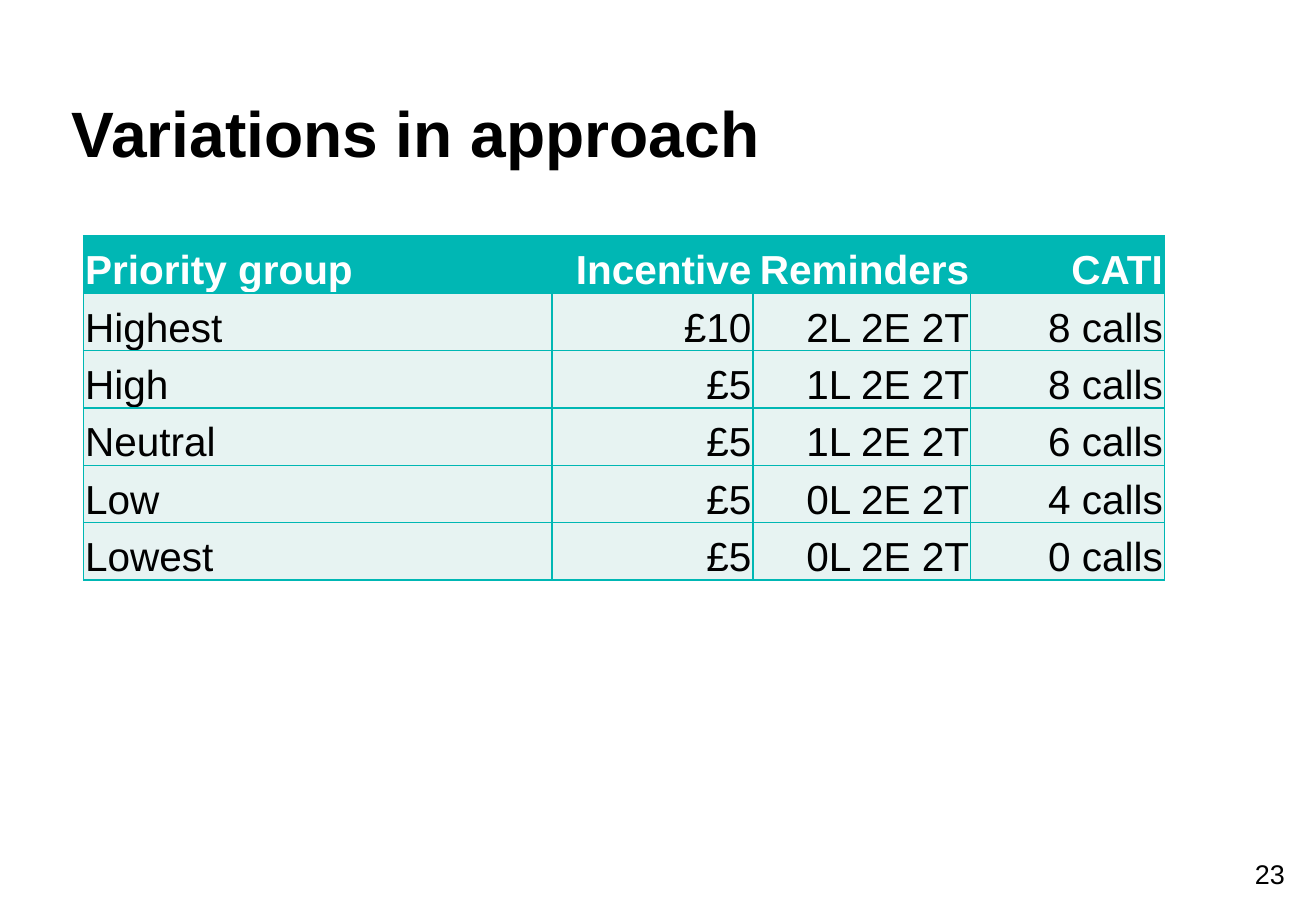
from lxml import etree
from pptx import Presentation
from pptx.dml.color import RGBColor
from pptx.enum.text import MSO_ANCHOR, MSO_AUTO_SIZE, PP_ALIGN
from pptx.oxml.ns import qn
from pptx.util import Cm, Pt

# Content
TITLE = "Variations in approach"
PAGE_NUMBER = "23"
ROWS = [
    ("Priority group", "Incentive", "Reminders", "CATI"),
    ("Highest", "£10", "2L 2E 2T", "8 calls"),
    ("High", "£5", "1L 2E 2T", "8 calls"),
    ("Neutral", "£5", "1L 2E 2T", "6 calls"),
    ("Low", "£5", "0L 2E 2T", "4 calls"),
    ("Lowest", "£5", "0L 2E 2T", "0 calls"),
]

# Style
FONT = "Arial"
BLACK = RGBColor(0x00, 0x00, 0x00)
WHITE = RGBColor(0xFF, 0xFF, 0xFF)
TEAL = RGBColor(0x00, 0xB7, 0xB4)
PALE_TEAL = RGBColor(0xE7, 0xF3, 0xF2)
LEFT, CENTER, RIGHT = PP_ALIGN.LEFT, PP_ALIGN.CENTER, PP_ALIGN.RIGHT
BOTTOM = MSO_ANCHOR.BOTTOM
NO_AUTOFIT = MSO_AUTO_SIZE.NONE

# Table geometry
TABLE_LEFT, TABLE_TOP = Cm(1.75), Cm(4.93)
COLUMN_WIDTHS = [Cm(9.79), Cm(4.2), Cm(4.55), Cm(4.05)]
ROW_HEIGHT = Cm(1.2)
CELL_MARGIN = Cm(0.03)
TITLE_ONLY = 5


def write(frame, text, size, color, align, bold=False):
    frame.text = text
    para = frame.paragraphs[0]
    para.alignment = align
    font = para.runs[0].font
    font.name, font.size, font.bold = FONT, Pt(size), bold
    font.color.rgb = color


def clear_margins(frame):
    frame.margin_left = frame.margin_right = 0
    frame.margin_top = frame.margin_bottom = 0


def add_borders(cell, color, width):
    properties = cell._tc.get_or_add_tcPr()
    for side in ("a:lnL", "a:lnR", "a:lnT", "a:lnB"):
        line = etree.SubElement(properties, qn(side), w=str(width))
        fill = etree.SubElement(line, qn("a:solidFill"))
        etree.SubElement(fill, qn("a:srgbClr"), val=str(color))


deck = Presentation()
deck.slide_width, deck.slide_height = Cm(27.51), Cm(19.05)
page = deck.slides.add_slide(deck.slide_layouts[TITLE_ONLY])

# Title
title = page.shapes.title
title.left, title.top = Cm(1.5), Cm(1.27)
title.width, title.height = Cm(19.38), Cm(2.29)
clear_margins(title.text_frame)
title.text_frame.vertical_anchor = BOTTOM
title.text_frame.auto_size = NO_AUTOFIT
write(title.text_frame, TITLE, 38, BLACK, LEFT, bold=True)

# Priority table
table = page.shapes.add_table(
    len(ROWS), len(COLUMN_WIDTHS), TABLE_LEFT, TABLE_TOP,
    sum(COLUMN_WIDTHS), ROW_HEIGHT * len(ROWS)).table
for column, width in zip(table.columns, COLUMN_WIDTHS):
    column.width = width
for row_index, values in enumerate(ROWS):
    table.rows[row_index].height = ROW_HEIGHT
    is_header = row_index == 0
    for column_index, value in enumerate(values):
        cell = table.cell(row_index, column_index)
        cell.margin_left = cell.margin_right = cell.margin_top = CELL_MARGIN
        cell.margin_bottom = 0
        cell.vertical_anchor = BOTTOM
        add_borders(cell, TEAL, Pt(1))
        cell.fill.solid()
        cell.fill.fore_color.rgb = TEAL if is_header else PALE_TEAL
        write(cell.text_frame, value, 24, WHITE if is_header else BLACK,
              LEFT if column_index == 0 else RIGHT, bold=is_header)

# Page number
number = page.shapes.add_textbox(Cm(25.91), Cm(17.93), Cm(1.27), Cm(0.69))
clear_margins(number.text_frame)
number.text_frame.word_wrap = True
write(number.text_frame, PAGE_NUMBER, 16, BLACK, CENTER)

deck.save("out.pptx")
